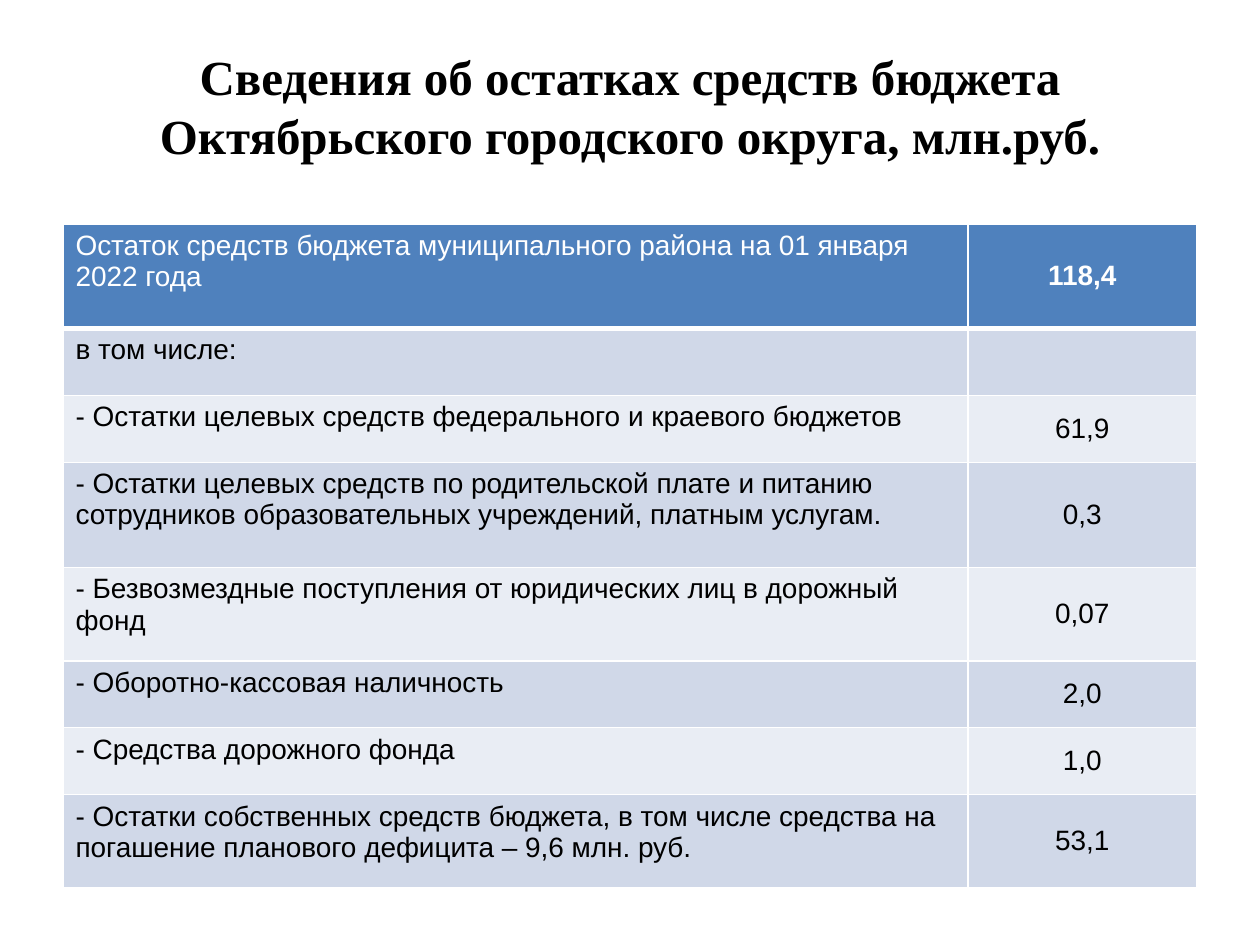
from pptx import Presentation
from pptx.dml.color import RGBColor
from pptx.enum.text import MSO_ANCHOR, PP_ALIGN
from pptx.oxml.ns import qn
from pptx.util import Cm, Pt
from lxml.etree import SubElement

COLORS = {
    "text": "000000",
    "white": "FFFFFF",
    "header": "4F81BD",
    "odd_band": "D0D8E8",
    "even_band": "E9EDF4",
}
TITLE = "Сведения об остатках средств бюджета Октябрьского городского округа, млн.руб."
BALANCES = [
    ("Остаток средств бюджета муниципального района на 01 января 2022 года", "118,4", 2.1),
    ("в том числе:", "", 1.35),
    ("- Остатки целевых средств федерального и краевого бюджетов", "61,9", 1.35),
    ("- Остатки целевых средств по родительской плате и питанию сотрудников "
     "образовательных учреждений, платным услугам.", "0,3", 2.12),
    ("- Безвозмездные поступления от юридических лиц в дорожный фонд", "0,07", 1.88),
    ("- Оборотно-кассовая наличность", "2,0", 1.35),
    ("- Средства дорожного фонда", "1,0", 1.35),
    ("- Остатки собственных средств бюджета, в том числе средства на погашение "
     "планового дефицита – 9,6 млн. руб.", "53,1", 1.88),
]
COLUMN_WIDTHS = (18.24, 4.62)


def write_text(frame, text, size=16, font="Arial", color="text", bold=False,
               align=PP_ALIGN.LEFT, anchor=MSO_ANCHOR.TOP):
    frame.text = text
    paragraph = frame.paragraphs[0]
    paragraph.alignment = align
    paragraph.font.size = Pt(size)
    for run in paragraph.runs:
        run.font.name = font
        run.font.size = Pt(size)
        run.font.bold = bold
        run.font.color.rgb = RGBColor.from_string(COLORS[color])
    frame.vertical_anchor = anchor


def set_borders(cell, top=1, bottom=1):
    properties = cell._tc.get_or_add_tcPr()
    for side, width in (("L", 1), ("R", 1), ("T", top), ("B", bottom)):
        line = SubElement(properties, qn(f"a:ln{side}"), w=str(Pt(width)))
        fill = SubElement(line, qn("a:solidFill"))
        SubElement(fill, qn("a:srgbClr"), val=COLORS["white"])


def format_cell(cell, text, row_index, **text_format):
    is_header = row_index == 0
    band = "odd_band" if row_index % 2 else "even_band"
    anchor = text_format.pop("anchor", MSO_ANCHOR.TOP)
    write_text(cell.text_frame, text, color="white" if is_header else "text",
               **text_format)
    cell.vertical_anchor = anchor
    set_borders(cell, top=3 if row_index == 1 else 1, bottom=3 if is_header else 1)
    cell.fill.solid()
    cell.fill.fore_color.rgb = RGBColor.from_string(COLORS["header" if is_header else band])


def add_title(slide):
    title = slide.shapes.title
    title.left, title.top, title.width, title.height = Cm(1.27), Cm(0.53), Cm(22.86), Cm(3.18)
    write_text(title.text_frame, TITLE, size=28, font="Times New Roman", bold=True,
               align=PP_ALIGN.CENTER, anchor=MSO_ANCHOR.MIDDLE)


def add_balance_table(slide):
    height = sum(row_height for _, _, row_height in BALANCES)
    table = slide.shapes.add_table(len(BALANCES), len(COLUMN_WIDTHS), Cm(1.27), Cm(4.52),
                                   Cm(sum(COLUMN_WIDTHS)), Cm(height)).table
    for column, width in zip(table.columns, COLUMN_WIDTHS):
        column.width = Cm(width)
    for row_index, (label, amount, row_height) in enumerate(BALANCES):
        table.rows[row_index].height = Cm(row_height)
        format_cell(table.cell(row_index, 0), label, row_index)
        format_cell(table.cell(row_index, 1), amount, row_index, bold=row_index == 0,
                    align=PP_ALIGN.CENTER, anchor=MSO_ANCHOR.MIDDLE)


def main():
    presentation = Presentation()
    presentation.slide_width = Cm(25.4)
    presentation.slide_height = Cm(19.05)
    slide = presentation.slides.add_slide(presentation.slide_layouts[5])
    add_title(slide)
    add_balance_table(slide)
    presentation.save("out.pptx")


if __name__ == "__main__":
    main()
